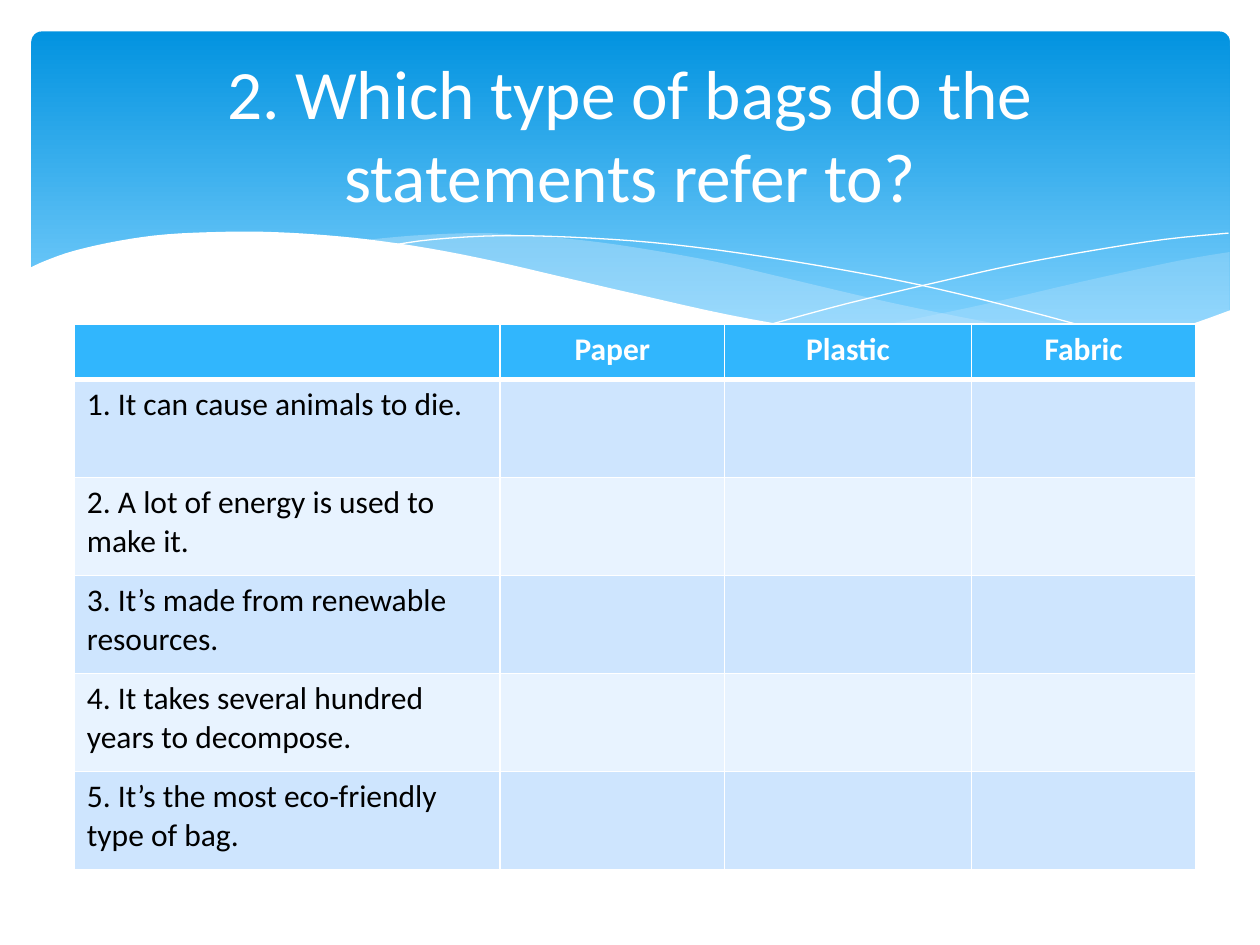
"""Build a quiz slide with a wave banner and a table of bag types."""
import dataclasses
import typing

import lxml.etree
import pptx
import pptx.dml.color
import pptx.enum.shapes
import pptx.enum.text
import pptx.oxml.ns
import pptx.util

Point = tuple[float, float]
WIDTH, HEIGHT = pptx.util.Inches(10), pptx.util.Inches(7.5)
COLUMN, ROW = WIDTH / 10, HEIGHT / 7.5
WHITE, BLACK, SKY, PALE = "FFFFFF", "000000", "31B6FD", "C6E7FC"
BANDS = ("CEE5FE", "E8F3FF")
CENTER = pptx.enum.text.PP_ALIGN.CENTER
LEFT = pptx.enum.text.PP_ALIGN.LEFT
MIDDLE = pptx.enum.text.MSO_ANCHOR.MIDDLE


@dataclasses.dataclass(frozen=True)
class Wave:
    """Smooth edges in grid units, filled with an opacity or drawn as a hairline."""
    edges: tuple[tuple[Point, ...], ...]
    color: str = WHITE
    opacity: int = 100
    filled: bool = True


WAVES = (
    Wave((((9.76, 2), (9.35, 2.07), (8.61, 2.23), (7.79, 2.42), (7.06, 2.57), (6.61, 2.65)),
          ((6.61, 2.65), (7.05, 2.71), (7.57, 2.76), (8.03, 2.78), (8.54, 2.76),
           (8.97, 2.7), (9.35, 2.62), (9.76, 2.47))), PALE, 29),
    Wave((((8.93, 2.73), (8.37, 2.65), (7.75, 2.54), (7.06, 2.4), (6.29, 2.22), (5.69, 2.08),
           (5.14, 1.98), (4.65, 1.91), (4.2, 1.87), (3.8, 1.85), (3.28, 1.87), (2.86, 1.91)),
          ((2.86, 1.91), (3.42, 1.99), (4.04, 2.11), (4.49, 2.22), (5.3, 2.4), (6.01, 2.55),
           (6.65, 2.66), (7.22, 2.74), (7.73, 2.77), (8.18, 2.78), (8.57, 2.77),
           (8.93, 2.73))), PALE, 40),
    Wave((((3.09, 1.95), (3.44, 1.9), (4.01, 1.87), (4.69, 1.89), (5.33, 1.94), (6.08, 2.04),
           (6.95, 2.19), (7.6, 2.33), (8.31, 2.51), (9.07, 2.72)),), filled=False),
    Wave((((6.13, 2.57), (6.72, 2.41), (7.48, 2.23), (8.06, 2.1), (8.66, 1.99),
           (9.24, 1.9), (9.75, 1.85)),), filled=False),
    Wave((((9.77, 2.46), (9.4, 2.59), (8.99, 2.69), (8.5, 2.75), (8.09, 2.77), (7.61, 2.75),
           (7.08, 2.7), (6.48, 2.62), (5.79, 2.5), (5.03, 2.33), (4.47, 2.2), (3.91, 2.07),
           (3.4, 1.97), (2.92, 1.9), (2.5, 1.86), (2.11, 1.84), (1.77, 1.84), (1.32, 1.86),
           (0.95, 1.91), (0.59, 1.99), (0.36, 2.07), (0.23, 2.13)),
          ((0.23, 3.29), (9.77, 3.29)))),
)
COLUMN_WIDTHS = (3.38, 1.78, 1.96, 1.78)
TABLE_HEIGHT, HEADER_HEIGHT = 4.33, 0.44
HEADINGS = ("", "Paper", "Plastic", "Fabric")
STATEMENTS = (
    "1. It can cause animals to die.",
    "2. A lot of energy is used to make it.",
    "3. It’s made from renewable resources.",
    "4. It takes several hundred years to decompose.",
    "5. It’s the most eco-friendly type of bag.",
)


def rgb(color: str) -> pptx.dml.color.RGBColor:
    """Turn a hex string into a colour."""
    return pptx.dml.color.RGBColor.from_string(color)


def place(left: float, top: float, width: float, height: float) -> tuple[int, ...]:
    """Turn a box in grid units into slide lengths."""
    return tuple(round(n * unit) for n, unit in
                 zip((left, top, width, height), (COLUMN, ROW, COLUMN, ROW)))


def write(frame: typing.Any, text: str, size: float, color: str,
          bold: bool = False, align: typing.Any = LEFT) -> None:
    """Write one formatted paragraph."""
    para = frame.paragraphs[0]
    para.alignment = align
    span = para.add_run()
    span.text = text
    formats = {"name": "Calibri", "size": pptx.util.Pt(size), "bold": bold}
    for name, value in formats.items():
        setattr(span.font, name, value)
    span.font.color.rgb = rgb(color)


def smooth(knots: tuple[Point, ...], steps: int = 4) -> list[Point]:
    """Sample a Catmull-Rom curve through the knots."""
    padded = (knots[0], *knots, knots[-1])
    points = [knots[0]]
    for a, b, c, d in zip(padded, padded[1:], padded[2:], padded[3:]):
        for step in range(1, steps + 1):
            t = step / steps
            points.append(tuple(
                (2 * q + (r - p) * t + (2 * p - 5 * q + 4 * r - s) * t ** 2
                 + (3 * q - p - 3 * r + s) * t ** 3) / 2
                for p, q, r, s in zip(a, b, c, d)))
    return points


def draw_banner(page: typing.Any) -> None:
    """Draw the rounded gradient banner."""
    kind = pptx.enum.shapes.MSO_SHAPE.ROUNDED_RECTANGLE
    box = page.shapes.add_shape(kind, *place(0.25, 0.25, 9.51, 2.7))
    box.shadow.inherit = False
    box.adjustments[0] = 0.03
    box.line.fill.background()
    box.fill.gradient()
    box.fill.gradient_angle = 270
    stops = ((0, "0293E0"), (0.9, "83D3FE"))
    for stop, (position, color) in zip(box.fill.gradient_stops, stops):
        stop.position = position
        stop.color.rgb = rgb(color)


def draw_wave(page: typing.Any, wave: Wave) -> None:
    """Draw a filled wave or a hairline curve."""
    points = [(round(x * COLUMN), round(y * ROW))
              for edge in wave.edges for x, y in smooth(edge)]
    builder = page.shapes.build_freeform(*points[0])
    builder.add_line_segments(points[1:], close=wave.filled)
    shape = builder.convert_to_shape()
    shape.shadow.inherit = False
    if not wave.filled:
        shape.fill.background()
        shape.line.color.rgb = rgb(wave.color)
        shape.line.width = pptx.util.Pt(0)
        return
    shape.line.fill.background()
    shape.fill.solid()
    shape.fill.fore_color.rgb = rgb(wave.color)
    if wave.opacity < 100:
        tint = shape.element.spPr.find(pptx.oxml.ns.qn("a:solidFill"))[0]
        lxml.etree.SubElement(tint, pptx.oxml.ns.qn("a:alpha"), val=str(wave.opacity * 1000))


def draw_title(page: typing.Any, text: str) -> None:
    """Write the title in the banner."""
    box = page.shapes.add_textbox(*place(0.5, 0.37, 9, 1.37))
    box.text_frame.word_wrap = True
    box.text_frame.vertical_anchor = MIDDLE
    write(box.text_frame, text, 39.6, WHITE, align=CENTER)


def style_cell(cell: typing.Any, color: str, top: float, bottom: float) -> None:
    """Give a cell white borders and a solid fill."""
    qn = pptx.oxml.ns.qn
    properties = cell._tc.get_or_add_tcPr()
    for side, width in {"lnL": 1, "lnR": 1, "lnT": top, "lnB": bottom}.items():
        border = lxml.etree.SubElement(properties, qn(f"a:{side}"), w=str(pptx.util.Pt(width)))
        paint = lxml.etree.SubElement(border, qn("a:solidFill"))
        lxml.etree.SubElement(paint, qn("a:srgbClr"), val=WHITE)
    cell.fill.solid()
    cell.fill.fore_color.rgb = rgb(color)


def draw_table(page: typing.Any) -> None:
    """Draw the table of statements and bag types."""
    count = len(STATEMENTS)
    frame = page.shapes.add_table(count + 1, len(HEADINGS),
                                  *place(0.59, 2.57, sum(COLUMN_WIDTHS), TABLE_HEIGHT))
    table = frame.table
    statement_height = (TABLE_HEIGHT - HEADER_HEIGHT) / count
    for column, width in zip(table.columns, COLUMN_WIDTHS):
        column.width = round(width * COLUMN)
    for index, row in enumerate(table.rows):
        header = index == 0
        row.height = round((HEADER_HEIGHT if header else statement_height) * ROW)
        texts = HEADINGS if header else (STATEMENTS[index - 1], "", "", "")
        for cell, text in zip(row.cells, texts):
            style_cell(cell, SKY if header else BANDS[(index - 1) % 2],
                       top=3 if index == 1 else 1, bottom=3 if header else 1)
            if text:
                write(cell.text_frame, text, 18, WHITE if header else BLACK,
                      header, CENTER if header else LEFT)


def main() -> None:
    """Build and save the deck."""
    deck = pptx.Presentation()
    deck.slide_width, deck.slide_height = WIDTH, HEIGHT
    page = deck.slides.add_slide(deck.slide_layouts[6])
    draw_banner(page)
    for wave in WAVES:
        draw_wave(page, wave)
    draw_title(page, "2. Which type of bags do the statements refer to?")
    draw_table(page)
    deck.save("out.pptx")


if __name__ == "__main__":
    main()
